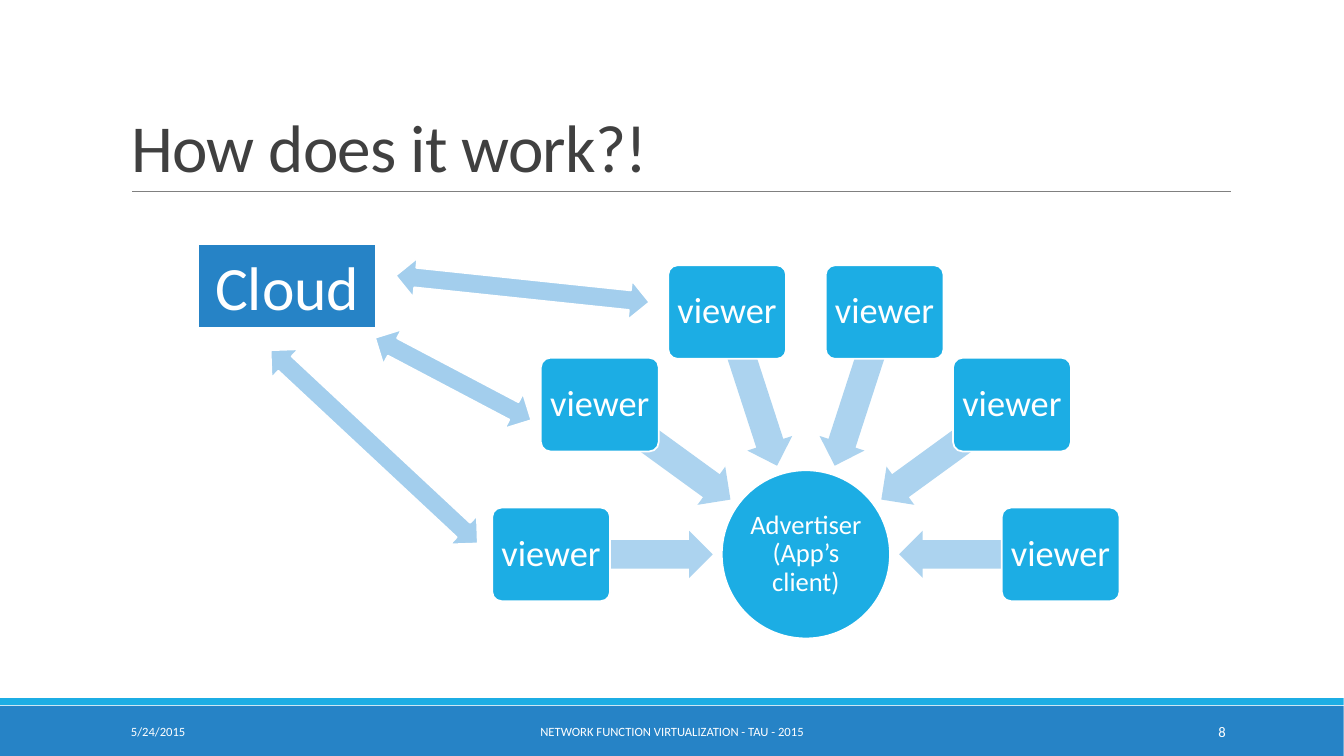
import math

from pptx import Presentation
from pptx.dml.color import RGBColor
from pptx.enum import shapes, text
from pptx.oxml import parse_xml
from pptx.oxml.ns import nsdecls
from pptx.util import Cm, Pt

BLUE = RGBColor(0x26, 0x83, 0xC6)
CYAN = RGBColor(0x1C, 0xAD, 0xE4)
PALE = RGBColor(0xAC, 0xD3, 0xEF)
LINK = RGBColor(0xA3, 0xCE, 0xED)
GRAY = RGBColor(0x80, 0x80, 0x80)
DARK = RGBColor(0x40, 0x40, 0x40)
WHITE = RGBColor(0xFF, 0xFF, 0xFF)
FONT = "Calibri"
KIND = shapes.MSO_SHAPE
ALIGN = text.PP_ALIGN

# Content
TITLE = "How does it work?!"
CLOUD = "Cloud"
ADVERTISER = "Advertiser (App’s client)"
VIEWERS = ["viewer"] * 6
FOOTER = [  # text, left, width, size, alignment
    ("5/24/2015", 3.05, 6.86, 9, ALIGN.LEFT),
    ("NETWORK FUNCTION VIRTUALIZATION - TAU - 2015", 10.24, 13.39, 9, ALIGN.CENTER),
    ("8", 27.51, 3.63, 10.5, ALIGN.RIGHT),
]
CLOUD_LINKS = [  # centre x, centre y, length, rotation
    (11.42, 9.55, 4.45, 27.8),
    (9.43, 11.26, 7.14, 43),
    (13.17, 7.28, 6.43, 6),
]

# Radial layout in centimetres
HUB_X, HUB_Y, HUB_SIZE = 20.31, 13.97, 4.24
VIEWER_RING, ARROW_RING = 6.42, 4.38
STEP = 180 / (len(VIEWERS) - 1)

deck = Presentation()
deck.slide_width, deck.slide_height = Cm(33.87), Cm(19.05)
page = deck.slides.add_slide(deck.slide_layouts[5])


def write(box, words, size, align=ALIGN.CENTER, color=WHITE, spacing=None,
          anchor=text.MSO_ANCHOR.MIDDLE, inset=None):
    frame = box.text_frame
    frame.word_wrap = True
    frame.auto_size = text.MSO_AUTO_SIZE.NONE
    frame.vertical_anchor = anchor
    if inset is not None:
        frame.margin_left = frame.margin_right = Cm(inset)
        frame.margin_top = frame.margin_bottom = Cm(inset)
    para = frame.paragraphs[0]
    para.text = words
    para.alignment = align
    if spacing:
        para.line_spacing = spacing
    para.font.name, para.font.size = FONT, Pt(size)
    para.font.color.rgb = color
    return para


def add_shape(kind, x, y, width, height, fill, outline=None, rotation=0):
    """Add a preset shape centred on x, y."""
    shape = page.shapes.add_shape(kind, Cm(x - width / 2), Cm(y - height / 2),
                                  Cm(width), Cm(height))
    shape.shadow.inherit = False
    shape.rotation = rotation
    shape.fill.solid()
    shape.fill.fore_color.rgb = fill
    if outline:
        shape.line.color.rgb = WHITE
        shape.line.width = Pt(outline)
    else:
        shape.line.fill.background()
    return shape


def around_hub(radius, angle):
    turn = math.radians(angle)
    return HUB_X + radius * math.cos(turn), HUB_Y + radius * math.sin(turn)


# Bottom bands and title rule
add_shape(KIND.RECTANGLE, 16.93, 18.42, 33.87, 1.27, BLUE)
add_shape(KIND.RECTANGLE, 16.93, 17.68, 33.87, 0.18, CYAN)
rule = page.shapes.add_connector(shapes.MSO_CONNECTOR.STRAIGHT,
                                 Cm(3.33), Cm(4.82), Cm(31.01), Cm(4.82))
rule.line.color.rgb = GRAY
rule.line.width = Pt(0.5)
rule._element.spPr.append(parse_xml(f"<a:effectLst {nsdecls('a')}/>"))

# Title
title = page.shapes.title
title.left, title.top, title.width, title.height = Cm(3.05), Cm(0.79), Cm(27.94), Cm(4.04)
heading = write(title, TITLE, 48, ALIGN.LEFT, DARK, 0.85, text.MSO_ANCHOR.BOTTOM)
heading.runs[0]._r.get_or_add_rPr().set("spc", "-50")

# Footer
for words, left, width, size, align in FOOTER:
    box = page.shapes.add_textbox(Cm(left), Cm(17.93), Cm(width), Cm(1.02))
    write(box, words, size, align)

# Advertiser with the viewers fanned around it
hub = add_shape(KIND.OVAL, HUB_X, HUB_Y, HUB_SIZE, HUB_SIZE, CYAN, 1.25)
write(hub, ADVERTISER, 19, spacing=0.9, inset=0.03)
for index, label in enumerate(VIEWERS):
    angle = 180 + index * STEP
    arrow = add_shape(KIND.LEFT_ARROW, *around_hub(ARROW_RING, angle), 4.06, 1.19,
                      PALE, rotation=angle % 360)
    arrow.adjustments[0] = 0.6
    viewer = add_shape(KIND.ROUNDED_RECTANGLE, *around_hub(VIEWER_RING, angle),
                       2.97, 2.36, CYAN, 1.25)
    viewer.adjustments[0] = 0.1
    write(viewer, label, 26, spacing=0.9, inset=0.13)

# Cloud and its links to viewers
cloud = add_shape(KIND.RECTANGLE, 7.24, 7.21, 4.52, 2.13, BLUE, 2)
write(cloud, CLOUD, 44)
for x, y, length, rotation in CLOUD_LINKS:
    add_shape(KIND.LEFT_RIGHT_ARROW, x, y, length, 0.99, LINK, 1.25, rotation)

deck.save("out.pptx")
